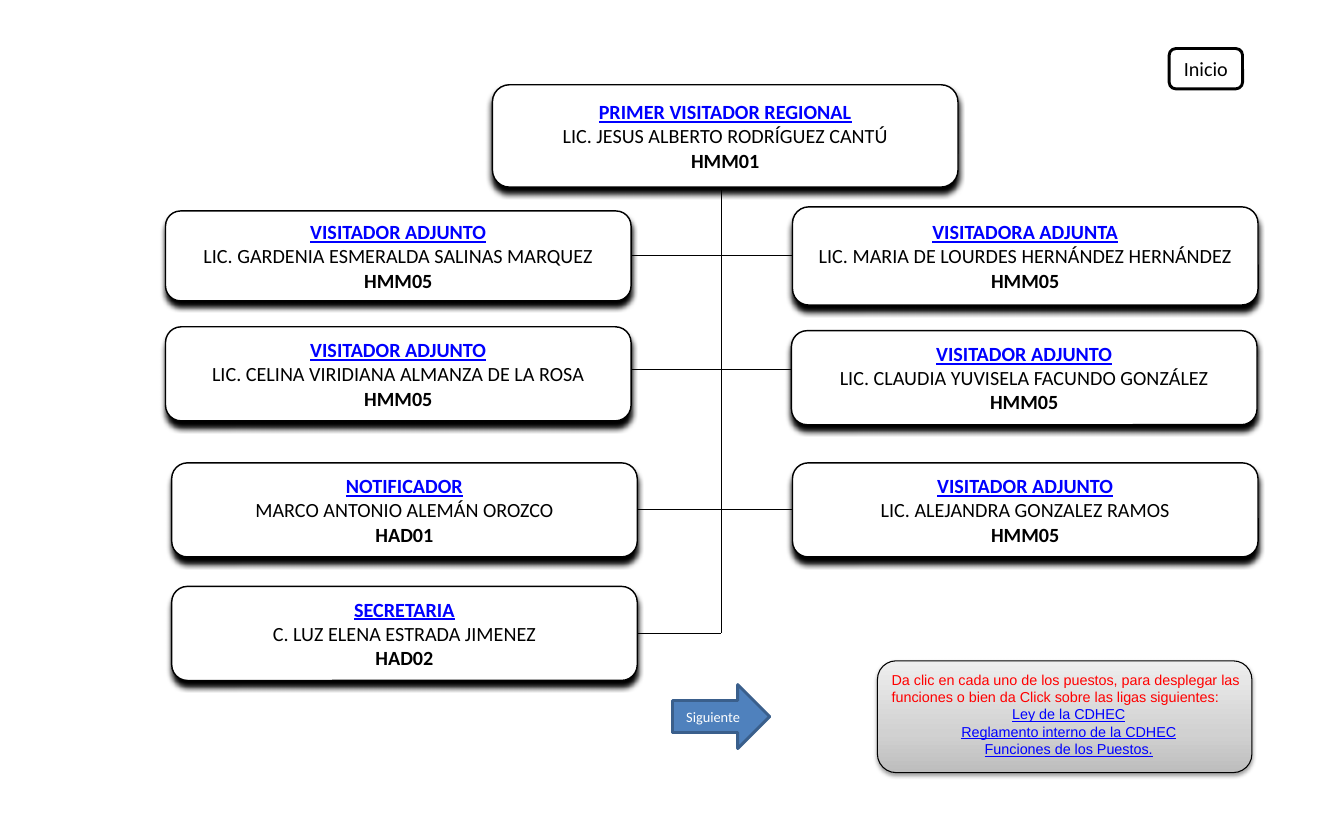
"""Builds the organisation chart of a regional visitor's office."""
from copy import deepcopy

from lxml.etree import SubElement
from pptx import Presentation
from pptx.dml.color import RGBColor
from pptx.enum.shapes import MSO_CONNECTOR, MSO_SHAPE
from pptx.enum.text import MSO_ANCHOR, MSO_AUTO_SIZE, PP_ALIGN
from pptx.oxml.ns import qn
from pptx.util import Pt

COLORS = {
    "black": "000000", "white": "FFFFFF", "link": "0000FF", "red": "FF0000",
    "blue": "4F81BD", "navy": "3A5F8C",
    "dark": "BDBDBD", "mid": "D1D1D1", "light": "EEEEEE",
}


def color(name):
    return RGBColor.from_string(COLORS[name])


class Chart:
    def __init__(self, slide, font="Calibri", size=14):
        self.slide, self.font, self.size = slide, font, size

    def shape(self, kind, area, fill="white", line="black", width=1.0):
        item = self.slide.shapes.add_shape(kind, *map(Pt, area))
        item.shadow.inherit = False
        item.fill.solid()
        item.fill.fore_color.rgb = color(fill)
        item.line.color.rgb = color(line)
        item.line.width = Pt(width)
        return item

    def shadow(self, item, alpha, blur, shift):
        effects = item._element.spPr.find(qn("a:effectLst"))
        outer = SubElement(effects, qn("a:outerShdw"), blurRad=str(Pt(blur)),
                           dist=str(Pt(shift)), dir="5400000", rotWithShape="0")
        tint = SubElement(outer, qn("a:srgbClr"), val=COLORS["black"])
        SubElement(tint, qn("a:alpha"), val=str(alpha * 1000))

    def text(self, item, lines, looks, font=None, size=None):
        frame = item.text_frame
        frame.text = "\n".join(lines)
        for para, (tone, bold, under) in zip(frame.paragraphs, looks):
            para.alignment = PP_ALIGN.CENTER
            for run in para.runs:
                run.font.name = font or self.font
                run.font.size = Pt(size or self.size)
                run.font.color.rgb = color(tone)
                run.font.bold = bold
                run.font.underline = under
        return frame

    def post(self, area, *lines):
        item = self.shape(MSO_SHAPE.ROUNDED_RECTANGLE, area)
        self.shadow(item, 100, 4, 4)
        looks = [("link", True, True), ("black", False, False), ("black", True, False)]
        frame = self.text(item, lines, looks)
        frame.word_wrap = False
        frame.vertical_anchor = MSO_ANCHOR.MIDDLE
        frame.margin_left = frame.margin_right = Pt(12.25)
        frame.margin_top = frame.margin_bottom = Pt(6.5)
        return item

    def button(self, kind, area, label, tone, size, **style):
        item = self.shape(kind, area, **style)
        frame = self.text(item, [label], [(tone, False, False)], size=size)
        frame.vertical_anchor = MSO_ANCHOR.MIDDLE

    def line(self, start, end, left=None, right=None):
        item = self.slide.shapes.add_connector(
            MSO_CONNECTOR.STRAIGHT, *map(Pt, (*start, *end)))
        if left is not None:
            item.begin_connect(left, 3)
        if right is not None:
            item.end_connect(right, 1)
        item.line.color.rgb = color("black")
        item.line.width = Pt(0.75)
        SubElement(item._element.spPr, qn("a:effectLst"))

    def panel(self, area):
        item = self.shape(MSO_SHAPE.ROUNDED_RECTANGLE, area, width=0.75)
        self.shadow(item, 38, 3.1, 1.6)
        item.fill.gradient()
        item.fill.gradient_angle = 90
        first = next(item._element.spPr.iter(qn("a:gs")))
        first.addnext(deepcopy(first))
        steps = [("dark", 0), ("mid", 0.35), ("light", 1)]
        for stop, (tone, place) in zip(item.fill.gradient_stops, steps):
            stop.color.rgb = color(tone)
            stop.position = place

    def note(self, area, intro, links):
        item = self.slide.shapes.add_textbox(*map(Pt, area))
        looks = [("red", False, False)] + [("link", False, True)] * len(links)
        frame = self.text(item, [intro, *links], looks, "Arial", 10)
        frame.word_wrap = True
        frame.auto_size = MSO_AUTO_SIZE.SHAPE_TO_FIT_TEXT
        frame.paragraphs[0].alignment = PP_ALIGN.LEFT


def main():
    deck = Presentation()
    deck.slide_width, deck.slide_height = Pt(935.3), Pt(567.4)
    chart = Chart(deck.slides.add_slide(deck.slide_layouts[6]))
    wide, tall, trunk = 324, 65.5, 501.8

    chart.post((342.7, 59, wide, 71.3), "PRIMER VISITADOR REGIONAL",
               "LIC. JESUS ALBERTO RODRÍGUEZ CANTÚ", "HMM01")
    chart.line((422.6, 257), (587.5, 257))

    rows = [
        [(115.2, 146.9, 62.6, "VISITADOR ADJUNTO",
          "LIC. GARDENIA ESMERALDA SALINAS MARQUEZ", "HMM05"),
         (551.5, 144, 68.4, "VISITADORA ADJUNTA",
          "LIC. MARIA DE LOURDES HERNÁNDEZ HERNÁNDEZ", "HMM05")],
        [(115.2, 227.5, tall, "VISITADOR ADJUNTO",
          "LIC. CELINA VIRIDIANA ALMANZA DE LA ROSA", "HMM05"),
         (550.8, 230.2, tall, "VISITADOR ADJUNTO",
          "LIC. CLAUDIA YUVISELA FACUNDO GONZÁLEZ", "HMM05")],
        [(119.5, 322.25, tall, "NOTIFICADOR",
          "MARCO ANTONIO ALEMÁN OROZCO", "HAD01"),
         (551.5, 322.25, tall, "VISITADOR ADJUNTO",
          "LIC. ALEJANDRA GONZALEZ RAMOS", "HMM05")],
        [(119.5, 408.25, tall, "SECRETARIA",
          "C. LUZ ELENA ESTRADA JIMENEZ", "HAD02")],
    ]
    posts = [[chart.post((x, y, wide, high), *lines) for x, y, high, *lines in row]
             for row in rows]
    for pair in (posts[0], posts[2]):
        chart.line((0, 0), (0, 0), *pair)
    chart.line((trunk, 132.5), (trunk, 441))
    chart.line((0, 0), (trunk, 441), left=posts[3][0])

    chart.button(MSO_SHAPE.ROUNDED_RECTANGLE, (813.6, 33.8, 51.1, 28.1),
                 "Inicio", "black", 14, width=2)
    chart.button(MSO_SHAPE.RIGHT_ARROW, (468, 476.6, 67.7, 44.6),
                 "Siguiente", "white", 10, fill="blue", line="navy", width=2)
    chart.panel((610.6, 460.1, 260.6, 77.8))
    chart.note((613.4, 463.7, 260.6, 67.7),
               "Da clic en cada uno de los puestos, para desplegar las funciones "
               "o bien da Click sobre las ligas siguientes:",
               ["Ley de la CDHEC", "Reglamento interno de la CDHEC",
                "Funciones de los Puestos."])
    deck.save("out.pptx")


if __name__ == "__main__":
    main()
